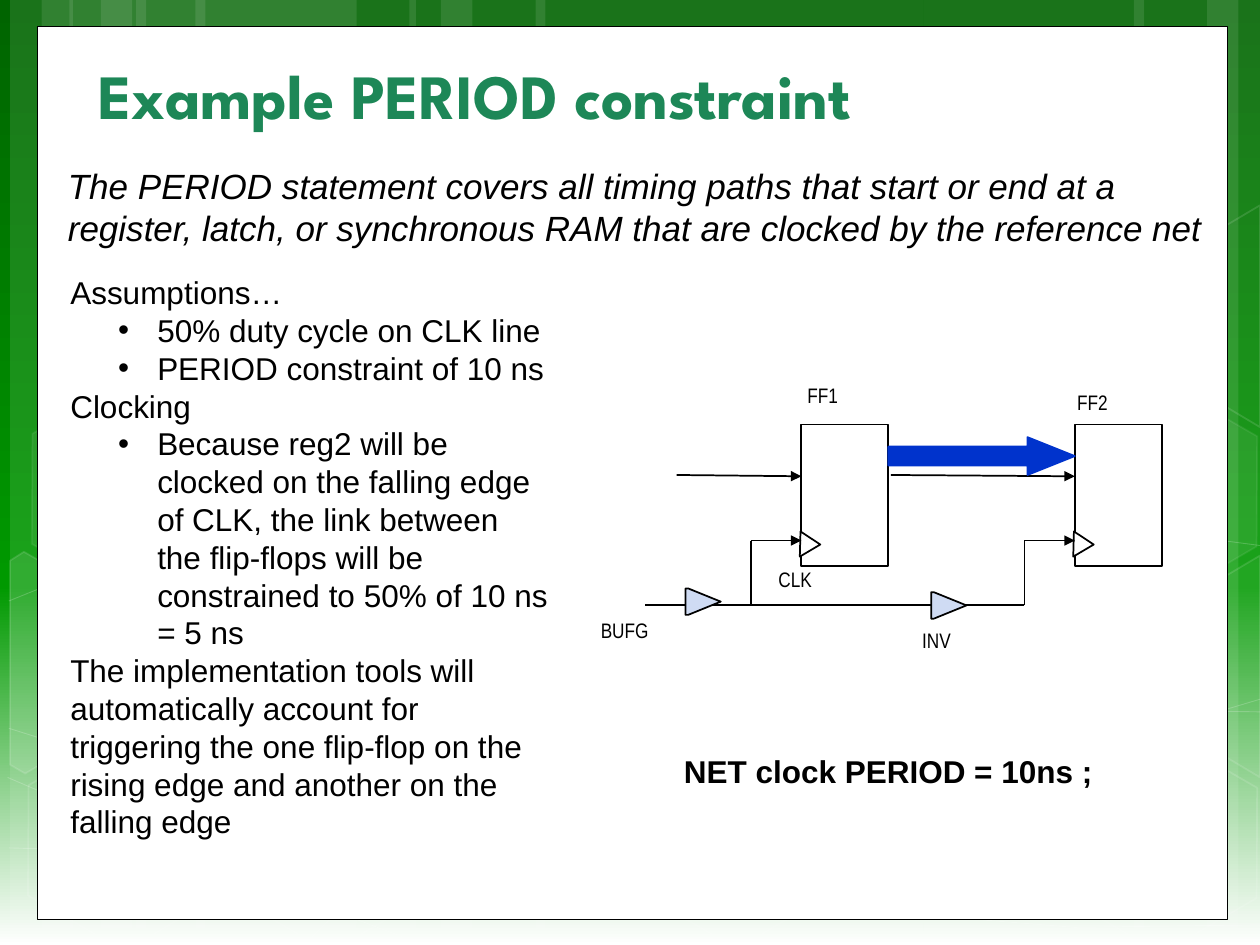
from copy import deepcopy

from pptx import Presentation
from pptx import util as u
from pptx.dml import color
from pptx.enum import shapes, text
from pptx.oxml import ns, xmlchemy

PX = 9144
KIND = shapes.MSO_SHAPE
COLORS = {
    "forest": "006400", "green": "009900", "white": "FFFFFF", "black": "000000",
    "title": "1D8757", "arrow": "0033CC", "buffer": "CFDBF3",
}
FORMATS = {
    "title": {"name": "League Spartan", "size": u.Pt(36), "bold": True},
    "lead": {"name": "Arial", "size": u.Pt(20), "italic": True},
    "body": {"name": "Arial", "size": u.Pt(18)},
    "code": {"name": "Arial", "size": u.Pt(18), "bold": True},
    "label": {"name": "Arial Narrow", "size": u.Pt(12)},
}
STRIPES = [
    (108, 175), (8, 50), (33, 83), (155, 175), (55, 50), (80, 83),
    (733, 175), (958, 42), (900, 83), (425, 308), (325, 50), (350, 83),
]
WAVES = [
    [(7, 673), (190, 678), (458, 665), (792, 617), (1000, 555)],
    [(7, 477), (121, 431), (347, 387), (654, 387), (1000, 433)],
    [(6, 617), (170, 687), (334, 749)],
    [(7, 578), (128, 616), (357, 673), (628, 718), (853, 736), (1000, 734)],
    [(242, 749), (302, 691), (388, 639), (470, 609), (608, 578), (794, 562), (1000, 565)],
]
HEXAGONS = [
    (334, 36, 4, 8), (497, 589, 6, 12), (11, 591, 0, 12), (14, 312, 7, 8),
    (174, 592, 0, 12), (834, 593, 0, 12), (834, 314, 7, 8),
]
CUT_HEXAGONS = [
    ([(8, 445), (19, 438), (96, 482), (95, 570), (20, 614), (8, 607)], 10),
    ([(926, 485), (1000, 441), (1000, 617), (926, 573)], 4),
    ([(926, 207), (1000, 163), (1000, 339), (926, 295)], 0),
]
BODY = [
    ("Assumptions…", False),
    ("50% duty cycle on CLK line", True),
    ("PERIOD constraint of 10 ns", True),
    ("Clocking", False),
    ("Because reg2 will be clocked on the falling edge of CLK, the link between \v"
     "the flip-flops will be constrained to 50% of 10 ns = 5 ns", True),
    ("The implementation tools will automatically account for triggering the one "
     "flip-flop on the rising edge and another on the falling edge", False),
]
LABELS = [
    ("BUFG", 467, 485, 66), ("INV", 722, 493, 49), ("CLK", 608, 445, 53),
    ("FF1", 631, 299, 50), ("FF2", 845, 304, 50),
]


def emu(*lengths):
    return [u.Emu(length * PX) for length in lengths]


def rgb(name):
    return color.RGBColor.from_string(COLORS[name])


def child(parent, tag, **attributes):
    element = xmlchemy.OxmlElement(tag)
    for key, value in attributes.items():
        element.set(key, str(value))
    parent.append(element)
    return element


def paint(fill, name, opacity=100):
    if not name or not opacity:
        fill.background()
        return
    fill.solid()
    fill.fore_color.rgb = rgb(name)
    if opacity < 100:
        value = fill._xPr.find(".//" + ns.qn("a:srgbClr"))
        child(value, "a:alpha", val=opacity * 1000)


def finish(shape, fill=None, line="black", width=1, opacity=100, line_opacity=100):
    shape.shadow.inherit = False
    paint(shape.fill, fill, opacity)
    paint(shape.line.fill, line, line_opacity)
    if line:
        shape.line.width = u.Pt(width)


def add_preset(page, kind, frame, adjustments=(), rotation=0, **look):
    shape = page.shapes.add_shape(kind, *emu(*frame))
    shape.rotation = rotation
    for index, value in enumerate(adjustments):
        shape.adjustments[index] = value
    finish(shape, **look)


def add_outline(page, points, close, **look):
    builder = page.shapes.build_freeform(*points[0], scale=PX)
    builder.add_line_segments(points[1:], close=close)
    finish(builder.convert_to_shape(), **look)


def add_wire(page, start, end, arrow=False):
    wire = page.shapes.add_connector(shapes.MSO_CONNECTOR.STRAIGHT, *emu(*start, *end))
    wire.line.width = u.Pt(1)
    wire.line.color.rgb = rgb("black")
    if arrow:
        child(wire.line._get_or_add_ln(), "a:tailEnd", type="triangle")
    child(wire._element.spPr, "a:effectLst")


def add_bullet(para):
    para.level = 1
    properties = para._p.get_or_add_pPr()
    properties.set("marL", str(69 * PX))
    properties.set("indent", str(-31 * PX))
    child(properties, "a:buFont", typeface="Arial")
    child(properties, "a:buChar", char="•")


def add_text(page, frame, lines, style, ink="black", wrap=True, anchor="TOP"):
    box = page.shapes.add_textbox(*emu(*frame)).text_frame
    box.word_wrap = wrap
    box.vertical_anchor = text.MSO_ANCHOR[anchor]
    for index, (words, bulleted) in enumerate(lines):
        para = box.add_paragraph() if index else box.paragraphs[0]
        para.text = words
        if bulleted:
            add_bullet(para)
        for span in para.runs:
            for key, value in FORMATS[style].items():
                setattr(span.font, key, value)
            span.font.color.rgb = rgb(ink)


def set_background(page):
    fill = page.background.fill
    fill.gradient()
    fill.gradient_angle = 270
    stop_list = page._element.find(".//" + ns.qn("a:gsLst"))
    stop_list.append(deepcopy(stop_list[-1]))
    stops = zip(fill.gradient_stops, (0, 0.62, 1), ("forest", "green", "white"))
    for stop, position, name in stops:
        stop.position = position
        stop.color.rgb = rgb(name)


def add_backdrop(page):
    set_background(page)
    for left, width in STRIPES:
        add_preset(page, KIND.RECTANGLE, (left, 0, width, 750),
                   fill="white", opacity=10, line=None)
    for points in WAVES:
        add_outline(page, points, False, line="white", width=0.5, line_opacity=20)
    for left, top, opacity, line_opacity in HEXAGONS:
        add_preset(page, KIND.HEXAGON, (left, top, 175, 152), (0.285,), 30, fill="white",
                   opacity=opacity, line="white", line_opacity=line_opacity)
    for points, opacity in CUT_HEXAGONS:
        add_outline(page, points, True, fill="white", opacity=opacity,
                    line="white", line_opacity=12)
    add_preset(page, KIND.RECTANGLE, (30, 21, 944, 709), fill="white", width=0.5)


def add_flip_flop(page, left):
    add_preset(page, KIND.RECTANGLE, (left, 337, 69, 112))
    add_preset(page, KIND.ISOSCELES_TRIANGLE, (left - 3, 424, 20, 16),
               rotation=91.5, fill="white")
    add_wire(page, (left - 40, 429), (left, 429), arrow=True)
    add_wire(page, (left - 40, 429), (left - 40, 480))


def add_circuit(page):
    for left in (636, 853):
        add_flip_flop(page, left)
    add_wire(page, (813, 480), (512, 480))
    add_wire(page, (707, 377), (853, 378), arrow=True)
    add_preset(page, KIND.RIGHT_ARROW, (705, 347, 148, 30), (0.5, 1.25),
               fill="arrow", line="arrow")
    add_wire(page, (537, 377), (636, 378), arrow=True)
    for left, top in ((544, 467), (739, 470)):
        add_preset(page, KIND.PENTAGON, (left, top, 28, 21), (1.23,), fill="buffer")
    for words, left, top, width in LABELS:
        add_text(page, (left, top, width, 35), [(words, False)], "label", wrap=False)


def main():
    deck = Presentation()
    deck.slide_width, deck.slide_height = emu(1000, 750)
    page = deck.slides.add_slide(deck.slide_layouts[6])
    add_backdrop(page)
    add_text(page, (68, 34, 842, 76), [("Example PERIOD constraint", False)],
             "title", ink="title", anchor="BOTTOM")
    add_text(page, (46, 212, 406, 464), BODY, "body")
    add_circuit(page)
    lead = ("The PERIOD statement covers all timing paths that start or end at a register, "
            "latch, or synchronous RAM that are clocked by the reference net")
    add_text(page, (44, 126, 935, 77), [(lead, False)], "lead")
    add_text(page, (533, 592, 348, 40), [("NET clock PERIOD = 10ns ;", False)],
             "code", wrap=False)
    deck.save("out.pptx")


if __name__ == "__main__":
    main()
